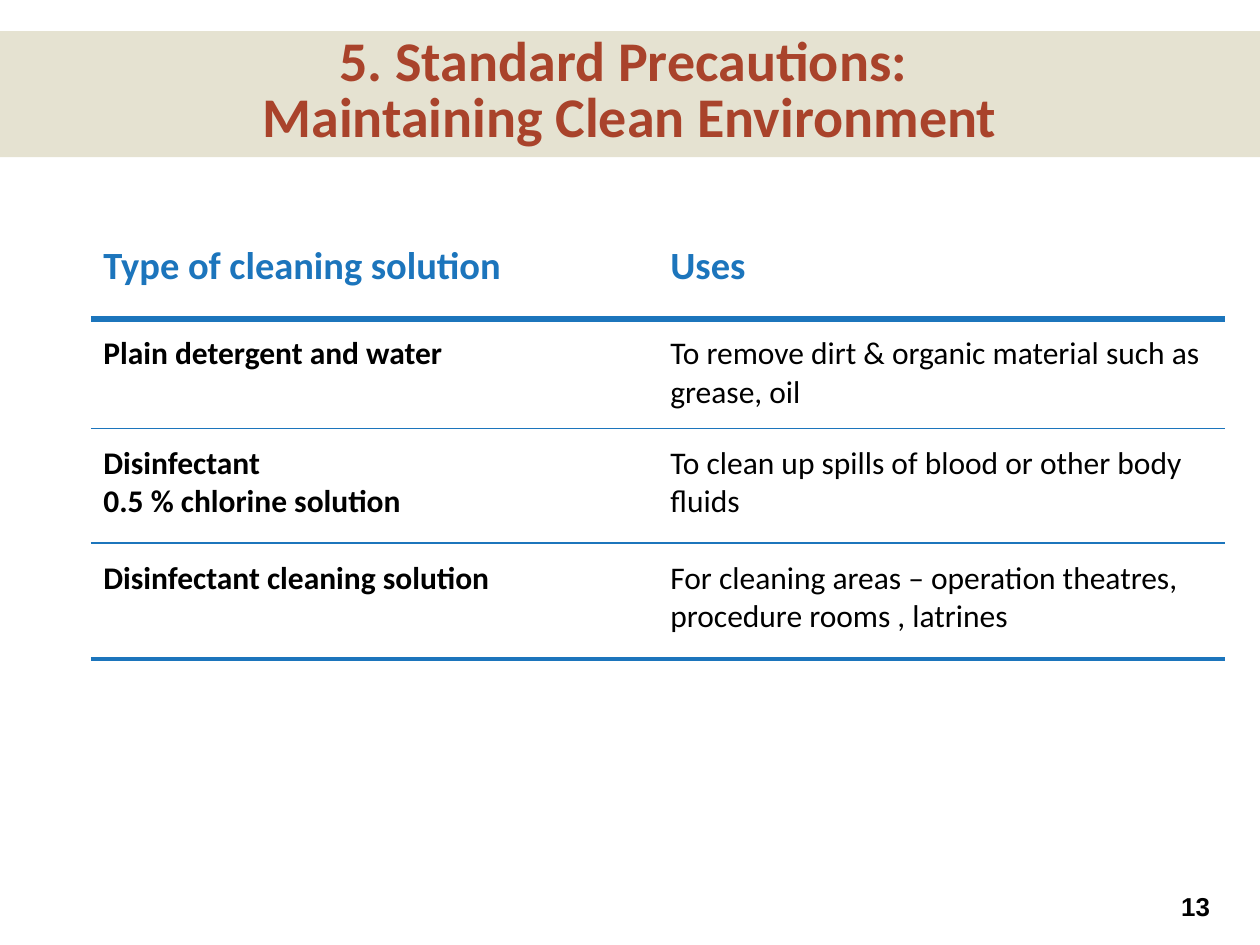
import pptx
import pptx.util
import pptx.dml.color
import pptx.enum.shapes
import pptx.enum.text
import pptx.oxml.ns
from lxml import etree

Cm, Pt = pptx.util.Cm, pptx.util.Pt
RGBColor = pptx.dml.color.RGBColor
PP_ALIGN = pptx.enum.text.PP_ALIGN
MSO_ANCHOR = pptx.enum.text.MSO_ANCHOR
qn = pptx.oxml.ns.qn

BLUE = RGBColor(0x1C, 0x75, 0xBC)
RUST = RGBColor(0xA9, 0x43, 0x2B)
SAND = RGBColor(0xDD, 0xD9, 0xC3)
BLACK = RGBColor(0, 0, 0)

TITLE = "5. Standard Precautions: \vMaintaining Clean Environment"
PAGE_NUMBER = "13"
# Cells of a row, row height in cm, width of the rule below in points
ROWS = [
    (("Type of cleaning solution", "Uses"), 1.86, 3),
    (("Plain detergent and water",
      "To remove dirt & organic material such as grease, oil"), 2.21, 1),
    (("Disinfectant\n0.5 % chlorine solution",
      "To clean up spills of blood or other body fluids"), 2.31, 1),
    (("Disinfectant cleaning solution",
      "For cleaning areas – operation theatres, procedure rooms , latrines"), 2.34, 2.25),
]
TABLE_LEFT, TABLE_TOP, COLUMN_WIDTH = 1.83, 4.57, 11.43
TABLE_WIDTH = 2 * COLUMN_WIDTH
NO_STYLE_NO_GRID = "{2D5ABB26-0587-4C30-8999-92F81FD0307C}"


def set_font(paragraph, name, size, color, bold):
    font = paragraph.font
    font.name, font.size, font.bold = name, Pt(size), bold
    font.color.rgb = color


def add_text(slide, box, text, anchor, alignment):
    frame = slide.shapes.add_textbox(*(Cm(value) for value in box)).text_frame
    frame.word_wrap = True
    frame.vertical_anchor = anchor
    frame.text = text
    frame.paragraphs[0].alignment = alignment
    return frame


def add_band(slide):
    band = slide.shapes.add_shape(
        pptx.enum.shapes.MSO_SHAPE.RECTANGLE, 0, Cm(0.63), Cm(25.4), Cm(2.54))
    band.shadow.inherit = False
    band.line.fill.background()
    band.fill.solid()
    band.fill.fore_color.rgb = SAND
    color = band.fill._xPr.find(".//" + qn("a:srgbClr"))
    etree.SubElement(color, qn("a:alpha"), val="76000")


def add_solution_table(slide):
    height = sum(row[1] for row in ROWS)
    table = slide.shapes.add_table(
        len(ROWS), 2, Cm(TABLE_LEFT), Cm(TABLE_TOP), Cm(TABLE_WIDTH), Cm(height)).table
    table.horz_banding = False
    table._tbl.tblPr.find(qn("a:tableStyleId")).text = NO_STYLE_NO_GRID
    for row_index, (texts, row_height, _) in enumerate(ROWS):
        is_header = row_index == 0
        table.rows[row_index].height = Cm(row_height)
        for column_index, text in enumerate(texts):
            cell = table.cell(row_index, column_index)
            cell.text = text
            cell.margin_top = Cm(0.32)
            cell.fill.background()
            for paragraph in cell.text_frame.paragraphs:
                set_font(paragraph, "Calibri", 22 if is_header else 18,
                         BLUE if is_header else BLACK, is_header or column_index == 0)


def add_rules(slide):
    y = TABLE_TOP
    for _, row_height, width in ROWS:
        y += row_height
        rule = slide.shapes.add_connector(
            pptx.enum.shapes.MSO_CONNECTOR.STRAIGHT,
            Cm(TABLE_LEFT), Cm(y), Cm(TABLE_LEFT + TABLE_WIDTH), Cm(y))
        rule.line.color.rgb = BLUE
        rule.line.width = Pt(width)
        etree.SubElement(rule._element.spPr, qn("a:effectLst"))


def main():
    presentation = pptx.Presentation()
    presentation.slide_width, presentation.slide_height = Cm(25.4), Cm(19.05)
    slide = presentation.slides.add_slide(presentation.slide_layouts[6])

    # Title on its band
    add_band(slide)
    title = add_text(slide, (0.76, 0.91, 23.88, 2.21), TITLE,
                     MSO_ANCHOR.BOTTOM, PP_ALIGN.CENTER)
    title.margin_bottom = Cm(0.13)
    title.paragraphs[0].line_spacing = Pt(32)
    set_font(title.paragraphs[0], "Calibri", 32, RUST, True)

    # Cleaning solutions, with a rule under each row
    add_solution_table(slide)
    add_rules(slide)

    # Page number
    number = add_text(slide, (22.2, 17.86, 2.44, 0.81), PAGE_NUMBER,
                      MSO_ANCHOR.MIDDLE, PP_ALIGN.RIGHT)
    set_font(number.paragraphs[0], "Arial", 14.8, BLACK, True)

    presentation.save("out.pptx")


if __name__ == "__main__":
    main()
